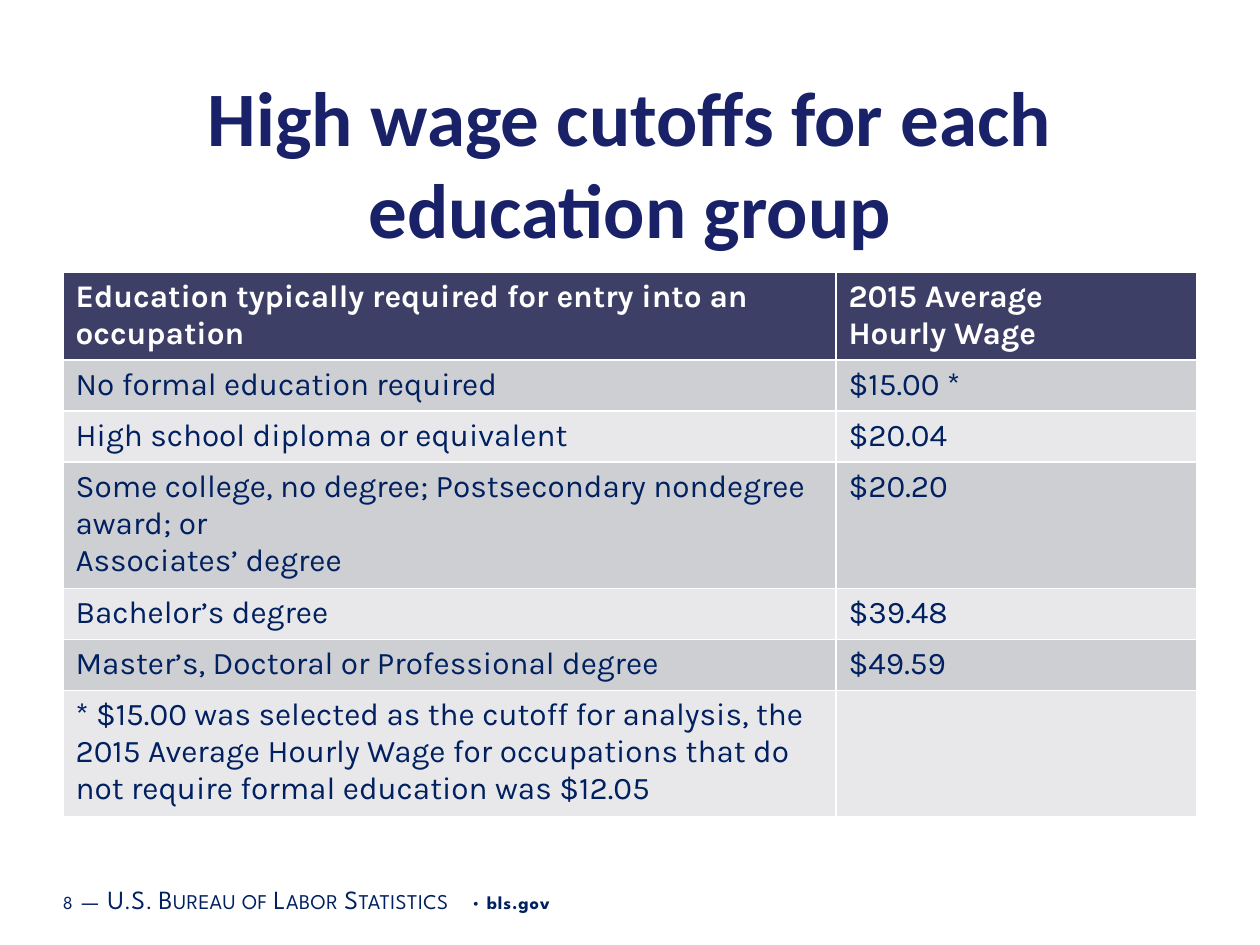
import pptx
import pptx.dml.color
import pptx.enum.text
import pptx.util
from dataclasses import dataclass

PX = 914400 // 126


@dataclass(frozen=True)
class Theme:
    title: str = "192168"
    text: str = "002060"
    header: str = "3E3F67"
    white: str = "FFFFFF"
    bands: tuple = ("CECFD3", "E8E8EB")
    title_font: str = "Calibri"
    table_font: str = "Karla"
    footer_font: str = "League Spartan"
    title_size: float = 44
    table_size: float = 18
    small: float = 10.5
    agency: float = 15
    gap: float = 16


T = Theme()


def add_run(p, text, font, size, color, bold=False):
    r = p.add_run()
    r.text = text
    r.font.name = font
    r.font.size = pptx.util.Pt(size)
    r.font.bold = bold
    r.font.color.rgb = pptx.dml.color.RGBColor.from_string(color)
    return r


def add_text_frame(s, x, y, w, h, anchor):
    tf = s.shapes.add_textbox(x * PX, y * PX, w * PX, h * PX).text_frame
    tf.word_wrap = True
    tf.vertical_anchor = anchor
    return tf


prs = pptx.Presentation()
prs.slide_width, prs.slide_height = 1260 * PX, 945 * PX
s = prs.slides.add_slide(prs.slide_layouts[6])

# Footer: text, size, letter spacing in 1/100 pt, small caps, bold
footer = [
    ("8", T.small, 50, False, False),
    (" ", T.gap, 50, False, False),
    ("—", T.agency, 30, True, False),
    (" ", T.gap, 50, False, False),
    ("U.S. Bureau of Labor Statistics", T.agency, 30, True, False),
    (" • ", T.small, 50, False, False),
    ("bls.gov", T.small, 50, False, True),
]
tf = add_text_frame(s, 54, 873, 798, 50, pptx.enum.text.MSO_ANCHOR.MIDDLE)
tf.margin_left = tf.margin_right = 9 * PX
tf.margin_top = tf.margin_bottom = 5 * PX
for text, size, spacing, small_caps, bold in footer:
    r = add_run(tf.paragraphs[0], text, T.footer_font, size, T.text, bold)
    rpr = r.font._element
    rpr.set("spc", str(spacing))
    if small_caps:
        rpr.set("cap", "small")

# Title
tf = add_text_frame(s, 63, 63, 1134, 111, pptx.enum.text.MSO_ANCHOR.TOP)
p = tf.paragraphs[0]
p.alignment = pptx.enum.text.PP_ALIGN.CENTER
add_run(p, "High wage cutoffs for each education group",
        T.title_font, T.title_size, T.title, True)

# Wage table: row height, then the paragraphs of each cell
rows = [
    (86, ["Education typically required for entry into an occupation"],
     ["2015 Average", "Hourly Wage"]),
    (51, ["No formal education required"], ["$15.00 *"]),
    (51, ["High school diploma or equivalent"], ["$20.04"]),
    (123, ["Some college, no degree; Postsecondary nondegree award; or",
           "Associates’ degree"], ["$20.20"]),
    (51, ["Bachelor’s degree"], ["$39.48"]),
    (51, ["Master’s, Doctoral or Professional degree"], ["$49.59"]),
    (123, ["* $15.00 was selected as the cutoff for analysis, the 2015 Average "
           "Hourly Wage for occupations that do not require formal education "
           "was $12.05"], []),
]
widths = [773, 361]
table = s.shapes.add_table(
    len(rows), len(widths), 63 * PX, 272 * PX,
    sum(widths) * PX, sum(row[0] for row in rows) * PX).table
for column, width in zip(table.columns, widths):
    column.width = width * PX

for i, (height, *cells) in enumerate(rows):
    table.rows[i].height = height * PX
    is_header = i == 0
    fill = T.header if is_header else T.bands[(i - 1) % 2]
    color = T.white if is_header else T.text
    for j, lines in enumerate(cells):
        cell = table.cell(i, j)
        cell.fill.solid()
        cell.fill.fore_color.rgb = pptx.dml.color.RGBColor.from_string(fill)
        tf = cell.text_frame
        for k, line in enumerate(lines):
            p = tf.add_paragraph() if k else tf.paragraphs[0]
            add_run(p, line, T.table_font, T.table_size, color, is_header)

prs.save("out.pptx")
